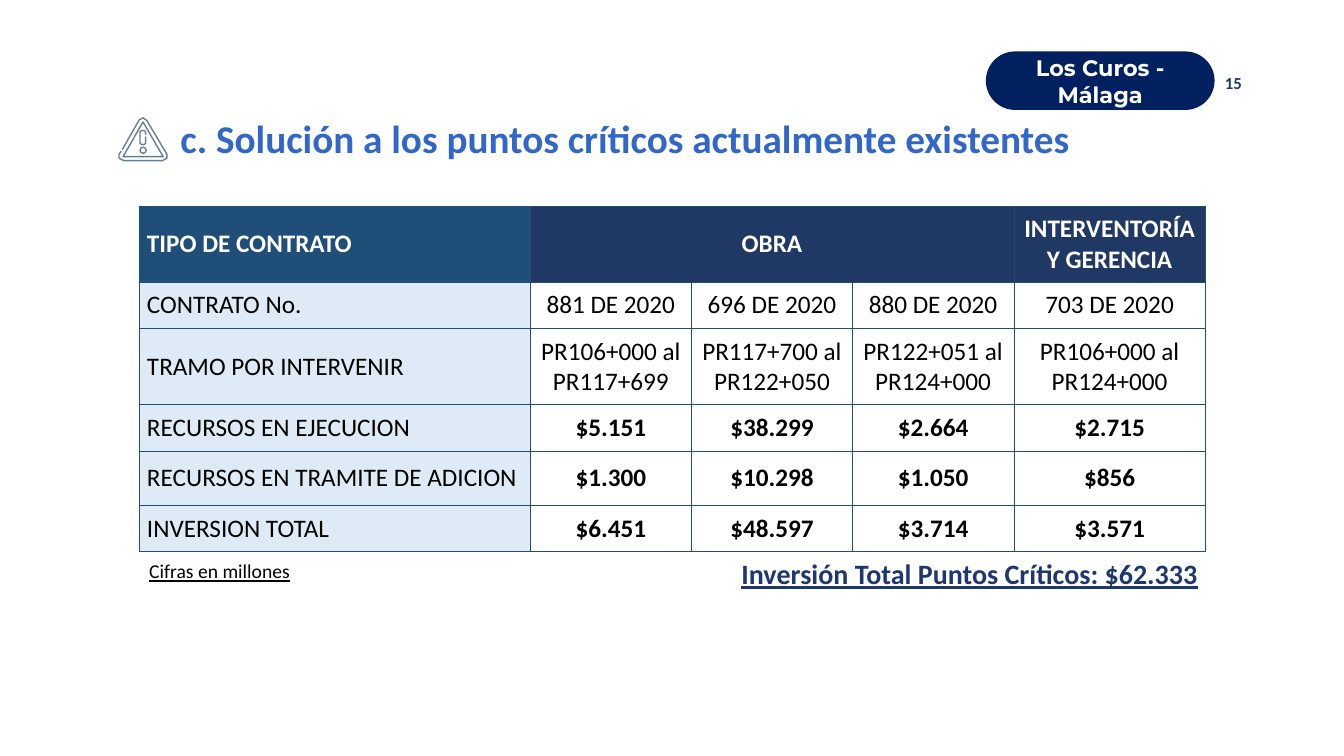
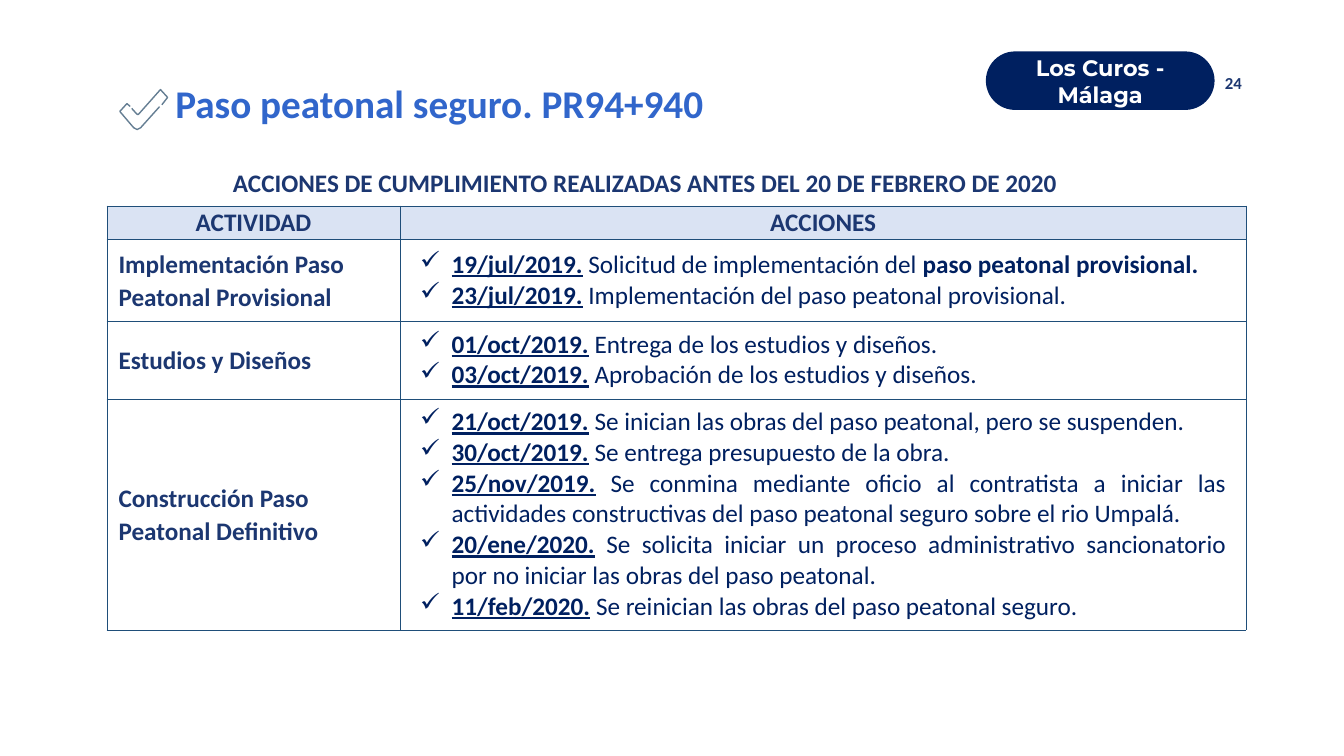
"""Build two slides on the works of the Los Curos - Málaga road."""
from lxml import etree
from pptx import Presentation
from pptx.dml.color import RGBColor
from pptx.enum import shapes, text
from pptx.oxml import ns
from pptx.util import Pt

WHITE = RGBColor(0xFF, 0xFF, 0xFF)
BLACK = RGBColor(0x00, 0x00, 0x00)
NAVY = RGBColor(0x00, 0x20, 0x60)
INDIGO = RGBColor(0x1C, 0x37, 0x71)
TITLE_BLUE = RGBColor(0x31, 0x66, 0xCB)
STEEL = RGBColor(0x1F, 0x4E, 0x79)
DEEP_BLUE = RGBColor(0x20, 0x38, 0x64)
PALE_BLUE = RGBColor(0xDE, 0xEB, 0xF7)
LAVENDER = RGBColor(0xDA, 0xE3, 0xF3)
ICON_GREY = RGBColor(0x65, 0x7E, 0x93)
LEFT, CENTER, RIGHT, JUSTIFY = (
    text.PP_ALIGN.LEFT, text.PP_ALIGN.CENTER, text.PP_ALIGN.RIGHT, text.PP_ALIGN.JUSTIFY)


def style(frame, size, color, align=LEFT, bold=None, spacing=None, face="Calibri", underline=None):
    """Format every paragraph of a text frame alike."""
    for paragraph in frame.paragraphs:
        paragraph.alignment = align
        paragraph.line_spacing = spacing
        font = paragraph.font
        font.size, font.name, font.bold, font.underline = Pt(size), face, bold, underline
        font.color.rgb = color


def dress(cell, fill, margins):
    """Give a table cell its fill, insets, centred anchor and thin borders."""
    cell.vertical_anchor = text.MSO_ANCHOR.MIDDLE
    cell.margin_left, cell.margin_top, cell.margin_right, cell.margin_bottom = map(Pt, margins)
    if fill is None:
        cell.fill.background()
    else:
        cell.fill.solid()
        cell.fill.fore_color.rgb = fill
    properties = cell._tc.get_or_add_tcPr()
    for position, side in enumerate(("lnL", "lnR", "lnT", "lnB")):
        border = etree.Element(ns.qn(f"a:{side}"), w=str(Pt(0.25)))
        solid = etree.SubElement(border, ns.qn("a:solidFill"))
        etree.SubElement(solid, ns.qn("a:srgbClr"), val=str(STEEL))
        properties.insert(position, border)


warning_icon = [
    ([(87.4, 106.8), (99.4, 85.7), (102.2, 84.2), (104.8, 86), (119.2, 110.2), (119.2, 113),
      (116, 114.8), (88.5, 114.8), (85, 113), (85, 110.2), (86.6, 108)], False),
    ([(102.2, 87.1), (116.6, 111.9), (87.9, 111.9)], True),
    ([(104, 96.2), (104, 94.2), (103, 93.2), (101.2, 93.2), (100, 94.2), (100, 102.3),
      (101.2, 103.3), (103, 103.3), (104, 102.3), (104, 97.6)], False),
    ([(102.2, 105.1), (103.8, 105.8), (104.4, 107.3), (103.8, 108.8), (102.2, 109.5),
      (100.7, 108.8), (100, 107.3), (100.7, 105.8)], True),
]
check_icon = [
    ([(93, 76), (90.7, 74), (85.6, 79.6), (95.5, 91.2), (98, 92.5), (100.5, 91.2),
      (114, 76.2)], False),
    ([(94.1, 77.5), (97.9, 81.7), (98.9, 81.7), (114.6, 64), (119.7, 69.6),
      (115.6, 74.9)], False),
]
pages = [
    ("c. Solución a los puntos críticos actualmente existentes", "15",
     (121.7, 75.6, 679.7, 41.8), 1.07, warning_icon),
    ("Paso peatonal seguro. PR94+940", "24", (118, 59.8, 638.6, 35.3), 0.8, check_icon),
]

deck = Presentation()
deck.slide_width, deck.slide_height = Pt(960), Pt(540)
slides = []
for heading, number, box, spacing, icon in pages:
    slide = deck.slides.add_slide(deck.slide_layouts[5])
    slides.append(slide)
    title = slide.shapes.title
    title.left, title.top, title.width, title.height = map(Pt, box)
    title.text_frame.text = heading
    title.text_frame.auto_size = text.MSO_AUTO_SIZE.NONE
    title.text_frame.vertical_anchor = text.MSO_ANCHOR.TOP
    style(title.text_frame, 28, TITLE_BLUE, bold=True, spacing=spacing)

    page_number = slide.shapes.add_textbox(Pt(678.2), Pt(44.6), Pt(216), Pt(28.8)).text_frame
    page_number.text = number
    page_number.vertical_anchor = text.MSO_ANCHOR.MIDDLE
    style(page_number, 12, INDIGO, RIGHT, True)

    road = slide.shapes.add_shape(
        shapes.MSO_SHAPE.ROUNDED_RECTANGLE, Pt(704.2), Pt(36.7), Pt(163.4), Pt(41.8))
    road.adjustments[0] = 0.5
    road.shadow.inherit = False
    road.fill.solid()
    road.fill.fore_color.rgb = NAVY
    road.line.fill.background()
    road.text_frame.text = "Los Curos - Málaga"
    road.text_frame.vertical_anchor = text.MSO_ANCHOR.MIDDLE
    style(road.text_frame, 16, WHITE, CENTER, True, face="Montserrat")

    for points, closed in icon:
        corners = [(Pt(x), Pt(y)) for x, y in points]
        builder = slide.shapes.build_freeform(*corners[0])
        builder.add_line_segments(corners[1:], close=closed)
        stroke = builder.convert_to_shape()
        stroke.shadow.inherit = False
        stroke.fill.background()
        stroke.line.color.rgb = ICON_GREY
        stroke.line.width = Pt(1)

contracts_slide, crossing_slide = slides

contract_rows = [
    ("TIPO DE CONTRATO", "OBRA", "", "", "INTERVENTORÍA\nY GERENCIA"),
    ("CONTRATO No.", "881 DE 2020", "696 DE 2020", "880 DE 2020", "703 DE 2020"),
    ("TRAMO POR INTERVENIR", "PR106+000 al\nPR117+699", "PR117+700 al\nPR122+050",
     "PR122+051 al\nPR124+000", "PR106+000 al\nPR124+000"),
    ("RECURSOS EN EJECUCION", "$5.151", "$38.299", "$2.664", "$2.715"),
    ("RECURSOS EN TRAMITE DE ADICION", "$1.300", "$10.298", "$1.050", "$856"),
    ("INVERSION TOTAL", "$6.451", "$48.597", "$3.714", "$3.571"),
]
contracts = contracts_slide.shapes.add_table(
    6, 5, Pt(99.4), Pt(147), Pt(761.8), Pt(247)).table
contracts.first_row = contracts.horz_banding = False
for column, width in zip(contracts.columns, (279.4, 115.1, 115.1, 115.1, 137.1)):
    column.width = Pt(width)
for row, height in zip(contracts.rows, (54.5, 33, 54.5, 33, 38.9, 33)):
    row.height = Pt(height)
contracts.cell(0, 1).merge(contracts.cell(0, 3))
for r, values in enumerate(contract_rows):
    for c, value in enumerate(values):
        cell = contracts.cell(r, c)
        if r == 0:
            fill = DEEP_BLUE if c else STEEL
        else:
            fill = None if c else PALE_BLUE
        dress(cell, fill, (5.6, 5.6, 5.6, 5.6))
        if value:
            cell.text_frame.text = value
            style(cell.text_frame, 18, BLACK if r else WHITE, CENTER if c else LEFT,
                  r == 0 or (r > 2 and c > 0))

total = contracts_slide.shapes.add_textbox(Pt(493.2), Pt(392.4), Pt(369.4), Pt(33.1)).text_frame
total.word_wrap = True
total.text = "Inversión Total Puntos Críticos: $62.333"
style(total, 20, INDIGO, RIGHT, True, 1.07, underline=True)
units = contracts_slide.shapes.add_textbox(Pt(99.4), Pt(396), Pt(115.9), Pt(24.5)).text_frame
units.text = "Cifras en millones"
style(units, 14, BLACK, underline=True)

activities = [
    ("Implementación Paso Peatonal Provisional", [
        ("19/jul/2019.", " Solicitud de implementación del ", "paso peatonal provisional."),
        ("23/jul/2019.", " Implementación del paso peatonal provisional.")]),
    ("Estudios y Diseños", [
        ("01/oct/2019.", " Entrega de los estudios y diseños."),
        ("03/oct/2019.", " Aprobación de los estudios y diseños.")]),
    ("Construcción Paso Peatonal Definitivo", [
        ("21/oct/2019.", " Se inician las obras del paso peatonal, pero se suspenden."),
        ("30/oct/2019.", " Se entrega presupuesto de la obra."),
        ("25/nov/2019.", " Se conmina mediante oficio al contratista a iniciar las actividades "
                         "constructivas del paso peatonal seguro sobre el rio Umpalá."),
        ("20/ene/2020.", " Se solicita iniciar un proceso administrativo sancionatorio por no "
                         "iniciar las obras del paso peatonal."),
        ("11/feb/2020.", " Se reinician las obras del paso peatonal seguro.")]),
]
caption = crossing_slide.shapes.add_textbox(Pt(54), Pt(114.5), Pt(813.6), Pt(31)).text_frame
caption.word_wrap = True
caption.text = "ACCIONES DE CUMPLIMIENTO REALIZADAS ANTES DEL 20 DE FEBRERO DE 2020"
style(caption, 18, INDIGO, CENTER, True, 1.07)

actions = crossing_slide.shapes.add_table(
    4, 2, Pt(76.2), Pt(147), Pt(813.9), Pt(302.9)).table
actions.first_row = actions.horz_banding = False
for column, width in zip(actions.columns, (209.7, 604.2)):
    column.width = Pt(width)
for row, height in zip(actions.rows, (23.8, 58.6, 55.5, 165)):
    row.height = Pt(height)
for c, label in enumerate(("ACTIVIDAD", "ACCIONES")):
    cell = actions.cell(0, c)
    dress(cell, LAVENDER, (0, 0, 0, 0))
    cell.text_frame.text = label
    style(cell.text_frame, 18, INDIGO, CENTER, True)
for r, (activity, steps) in enumerate(activities, 1):
    name_cell, steps_cell = actions.cell(r, 0), actions.cell(r, 1)
    dress(name_cell, None, (8.5, 5.6, 14.2, 5.6))
    name_cell.text_frame.text = activity
    style(name_cell.text_frame, 18, INDIGO, bold=True, spacing=1.07)

    dress(steps_cell, None, (14.2, 5.6, 14.2, 5.6))
    frame = steps_cell.text_frame
    for s, parts in enumerate(steps):
        paragraph = frame.add_paragraph() if s else frame.paragraphs[0]
        properties = paragraph._p.get_or_add_pPr()
        properties.set("marL", str(Pt(22.5)))
        properties.set("indent", str(Pt(-22.5)))
        etree.SubElement(properties, ns.qn("a:buChar"), char="✓")
        for p, part in enumerate(parts):
            run = paragraph.add_run()
            run.text = part
            run.font.bold = p != 1
            run.font.underline = p == 0
    style(frame, 18, NAVY, JUSTIFY)

deck.save("out.pptx")
